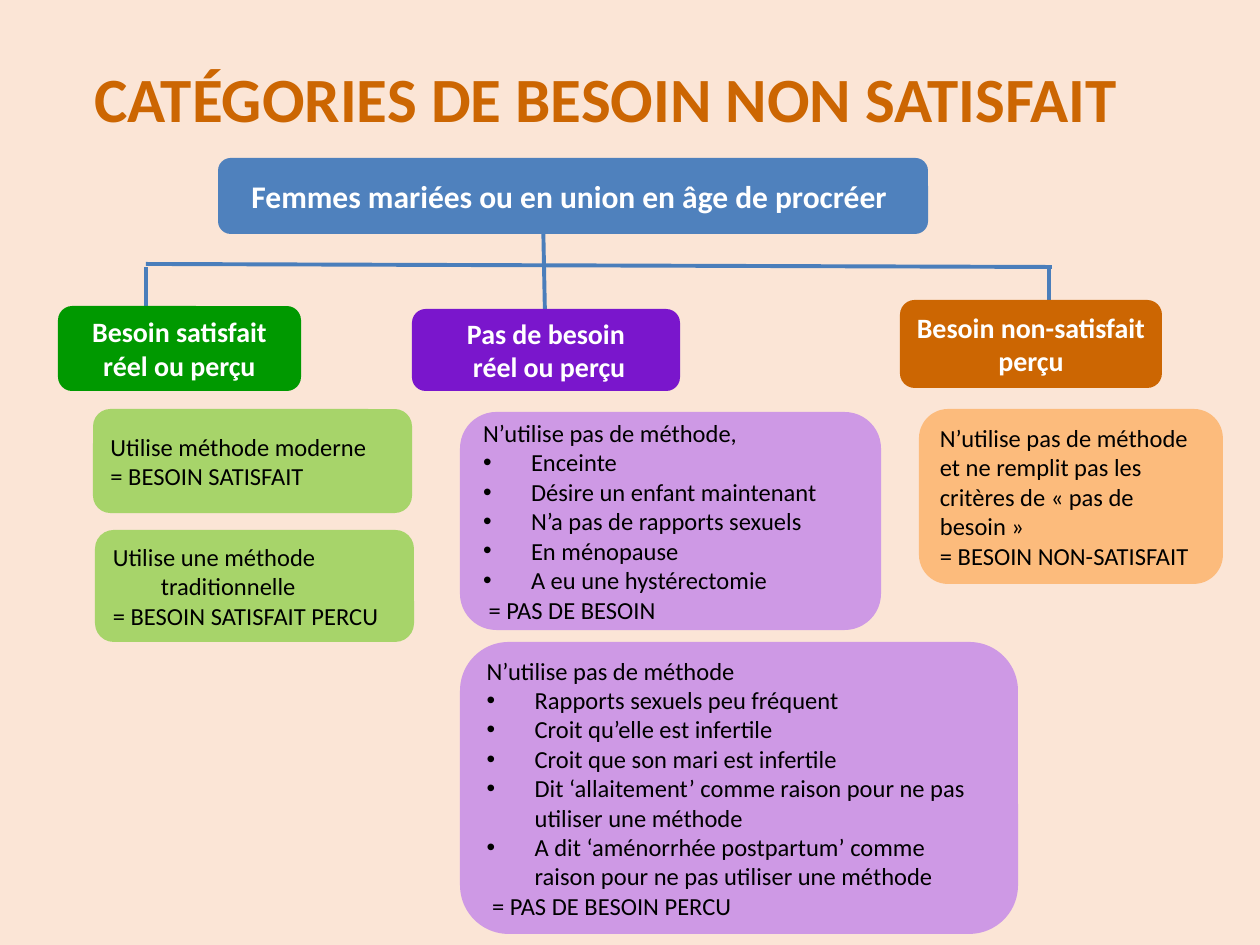
from pptx import Presentation
from pptx.dml.color import RGBColor as RGB
from pptx.enum.shapes import MSO_CONNECTOR as Conn, MSO_SHAPE as Kind
from pptx.enum.text import MSO_ANCHOR as Anchor, PP_ALIGN as Align
from pptx.oxml.ns import qn
from pptx.util import Pt
from lxml.etree import SubElement as Sub

PX = 914400 / 126
HANG = round(48 * PX)
COL = {
    "back": "FBE5D6", "line": "4A7EBB", "top": "4F81BD",
    "green": "009900", "lime": "92D050",
    "purple": "7A16CC", "lilac": "B167EF",
    "orange": "CC6602", "peach": "FD9F41",
    "white": "FFFFFF", "black": "000000",
}


def style(par, size, col, bold):
    for run in par.runs:
        font = run.font
        font.name, font.size, font.bold = "Calibri", Pt(size), bold
        font.color.rgb = RGB.from_string(COL[col])


def box(rect, fill, lines, size=14, alpha=None, hang=False):
    """Rounded box: opaque ones are bold headings, see-through ones hold notes."""
    shape = slide.shapes.add_shape(Kind.ROUNDED_RECTANGLE, *[round(n * PX) for n in rect])
    shape.shadow.inherit = False
    shape.line.fill.background()
    shape.fill.solid()
    shape.fill.fore_color.rgb = RGB.from_string(COL[fill])
    head = alpha is None
    if not head:
        tint = shape.fill._xPr.find(qn("a:solidFill"))[0]
        Sub(tint, qn("a:alpha"), val=str(alpha * 1000))
    frame = shape.text_frame
    frame.word_wrap = True
    frame.vertical_anchor = Anchor.MIDDLE
    for i, line in enumerate(lines):
        par = frame.paragraphs[0] if i == 0 else frame.add_paragraph()
        dot = line.startswith("•")
        par.text = line.lstrip("•")
        par.alignment = Align.CENTER if head else Align.LEFT
        style(par, size, "white" if head else "black", head)
        if dot or hang:
            prop = par._p.get_or_add_pPr()
            prop.set("marL", str(HANG))
            prop.set("indent", str(-HANG))
            if dot:
                Sub(prop, qn("a:buFont"), typeface="Arial")
                Sub(prop, qn("a:buChar"), char="•")


deck = Presentation()
deck.slide_width, deck.slide_height = round(1260 * PX), round(945 * PX)
slide = deck.slides.add_slide(deck.slide_layouts[6])
slide.background.fill.solid()
slide.background.fill.fore_color.rgb = RGB.from_string(COL["back"])

# Tree lines
for ends in [(543, 215, 545, 315), (146, 264, 1052, 267),
             (146, 307, 146, 267), (1049, 309, 1049, 268)]:
    line = slide.shapes.add_connector(Conn.STRAIGHT, *[round(n * PX) for n in ends])
    line.line.color.rgb = RGB.from_string(COL["line"])
    line.line.width = Pt(2.25)
    Sub(line._element.spPr, qn("a:effectLst"))

# Root
box((218, 158, 710, 76), "top", ["Femmes mariées ou en union en âge de procréer "], 18)

# Need satisfied
box((58, 306, 243, 85), "green", ["Besoin satisfait réel ou perçu"], 16)
box((93, 409, 319, 104), "lime",
    ["Utilise méthode moderne", "= BESOIN SATISFAIT"], alpha=80, hang=True)
box((95, 530, 319, 112), "lime",
    ["Utilise une méthode traditionnelle", "= BESOIN SATISFAIT PERCU"], alpha=80, hang=True)

# No need
box((412, 309, 268, 82), "purple", ["Pas de besoin", " réel ou perçu"], 16)
box((460, 412, 421, 218), "lilac", [
    "N’utilise pas de méthode,",
    "•Enceinte",
    "•Désire un enfant maintenant",
    "•N’a pas de rapports sexuels",
    "•En ménopause",
    "•A eu une hystérectomie",
    " = PAS DE BESOIN",
], alpha=60)
box((460, 642, 558, 292), "lilac", [
    "N’utilise pas de méthode",
    "•Rapports sexuels peu fréquent",
    "•Croit qu’elle est infertile",
    "•Croit que son mari est infertile",
    "•Dit ‘allaitement’ comme raison pour ne pas utiliser une méthode",
    "•A dit ‘aménorrhée postpartum’ comme raison pour ne pas utiliser une méthode",
    " = PAS DE BESOIN PERCU",
], alpha=60)

# Need not satisfied
box((900, 300, 262, 88), "orange", ["Besoin non-satisfait perçu"], 16)
box((919, 409, 304, 175), "peach", [
    "N’utilise pas de méthode et ne remplit pas les critères de « pas de besoin » \n"
    "= BESOIN NON-SATISFAIT",
], alpha=60)

# Title
title = slide.shapes.add_textbox(*[round(n * PX) for n in (82, 62, 1178, 147)])
title.text_frame.word_wrap = True
par = title.text_frame.paragraphs[0]
par.text = "CATÉGORIES DE BESOIN NON SATISFAIT"
par.line_spacing = 0.9
style(par, 36, "orange", True)

deck.save("out.pptx")
